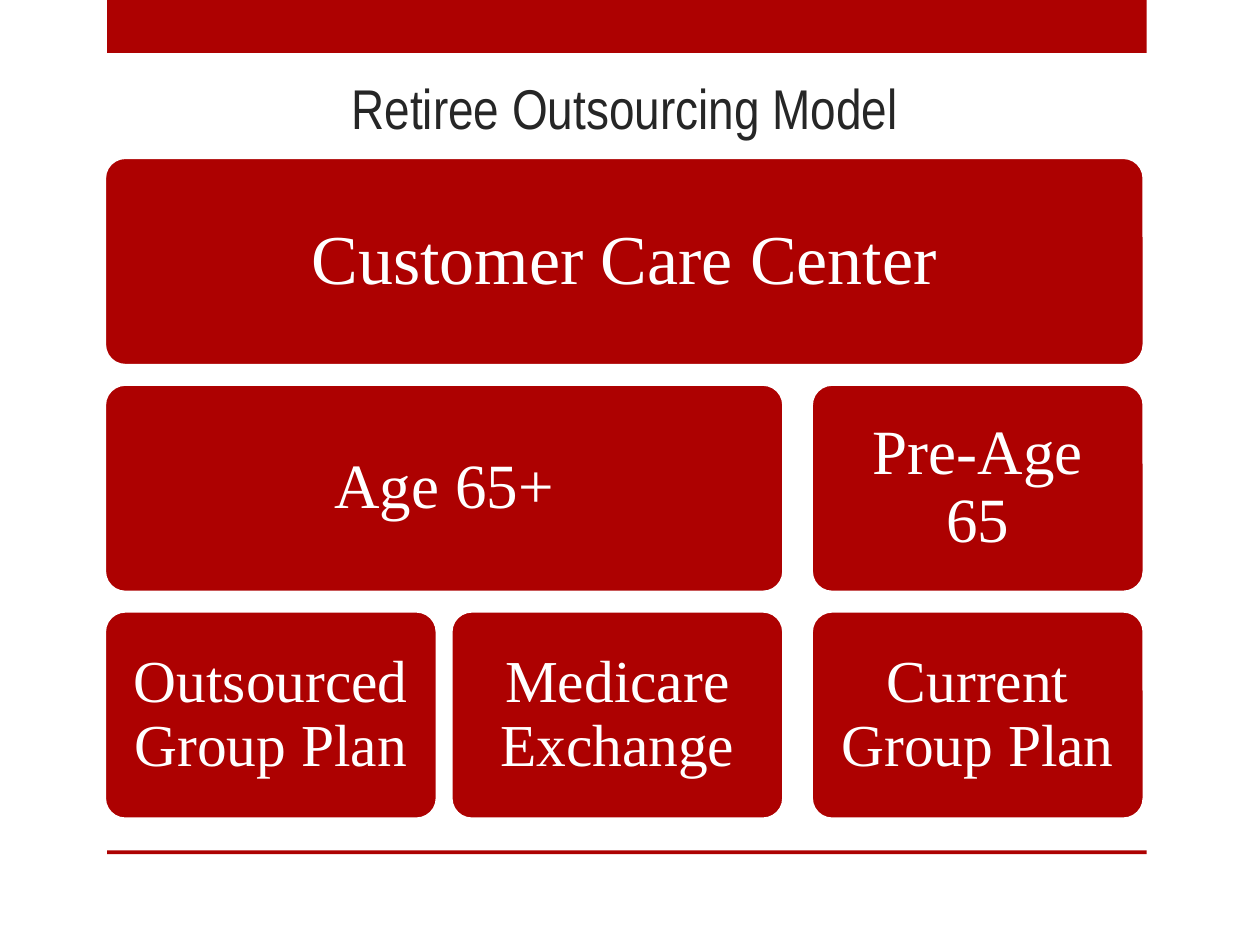
from pptx import Presentation
from pptx.dml.color import RGBColor
from pptx.enum.shapes import MSO_SHAPE
from pptx.enum.text import MSO_ANCHOR, PP_ALIGN
from pptx.util import Inches, Pt

RED, WHITE, DARK = "AD0101", "FFFFFF", "262626"
TITLE = "Retiree Outsourcing Model"
BANDS = [(0, 0.42), (6.75, 0.03)]
BAND_LEFT, BAND_WIDTH = 0.85, 8.25

COLUMN_LEFTS = [0.83, 3.58, 6.44]
COLUMN_WIDTH = 2.64
ROW_TOP, ROW_PITCH, ROW_HEIGHT = 1.25, 1.8, 1.65
ROW_STYLES = [(40, 0.17), (36, 0.15), (34, 0.14)]
BOXES = [
    ("Customer Care Center", 0, 0, 2),
    ("Age 65+", 1, 0, 1),
    ("Outsourced Group Plan", 2, 0, 0),
    ("Medicare Exchange", 2, 1, 1),
    ("Pre-Age 65", 1, 2, 2),
    ("Current Group Plan", 2, 2, 2),
]


def color(value):
    return RGBColor.from_string(value)


def add_red_shape(slide, kind, left, top, width, height):
    shape = slide.shapes.add_shape(
        kind, Inches(left), Inches(top), Inches(width), Inches(height))
    shape.shadow.inherit = False
    shape.fill.solid()
    shape.fill.fore_color.rgb = color(RED)
    shape.line.fill.background()
    return shape


def set_text(shape, text, font_name, size, text_color, anchor):
    frame = shape.text_frame
    frame.text = text
    frame.word_wrap = True
    frame.vertical_anchor = anchor
    paragraph = frame.paragraphs[0]
    paragraph.alignment = PP_ALIGN.CENTER
    paragraph.font.name = font_name
    paragraph.font.size = Pt(size)
    paragraph.font.color.rgb = color(text_color)
    return frame


def add_box(slide, text, row, first, last):
    left = COLUMN_LEFTS[first]
    width = COLUMN_LEFTS[last] + COLUMN_WIDTH - left
    shape = add_red_shape(slide, MSO_SHAPE.ROUNDED_RECTANGLE, left,
                          ROW_TOP + row * ROW_PITCH, width, ROW_HEIGHT)
    shape.adjustments[0] = 0.1
    shape.line.color.rgb = color(WHITE)
    shape.line.width = Pt(1.75)
    size, inset = ROW_STYLES[row]
    frame = set_text(shape, text, "Times New Roman", size, WHITE, MSO_ANCHOR.MIDDLE)
    frame.margin_left = frame.margin_right = Inches(inset)
    frame.margin_top = frame.margin_bottom = Inches(inset)
    frame.paragraphs[0].line_spacing = 0.9


def main():
    presentation = Presentation()
    presentation.slide_width, presentation.slide_height = Inches(10), Inches(7.5)
    slide = presentation.slides.add_slide(presentation.slide_layouts[5])

    for top, height in BANDS:
        add_red_shape(slide, MSO_SHAPE.RECTANGLE, BAND_LEFT, top, BAND_WIDTH, height)

    title = slide.shapes.title
    title.left, title.top = Inches(0), Inches(0.42)
    title.width, title.height = Inches(9.92), Inches(0.75)
    set_text(title, TITLE, "Arial Narrow", 32, DARK, MSO_ANCHOR.BOTTOM)

    for box in BOXES:
        add_box(slide, *box)

    presentation.save("out.pptx")


if __name__ == "__main__":
    main()
